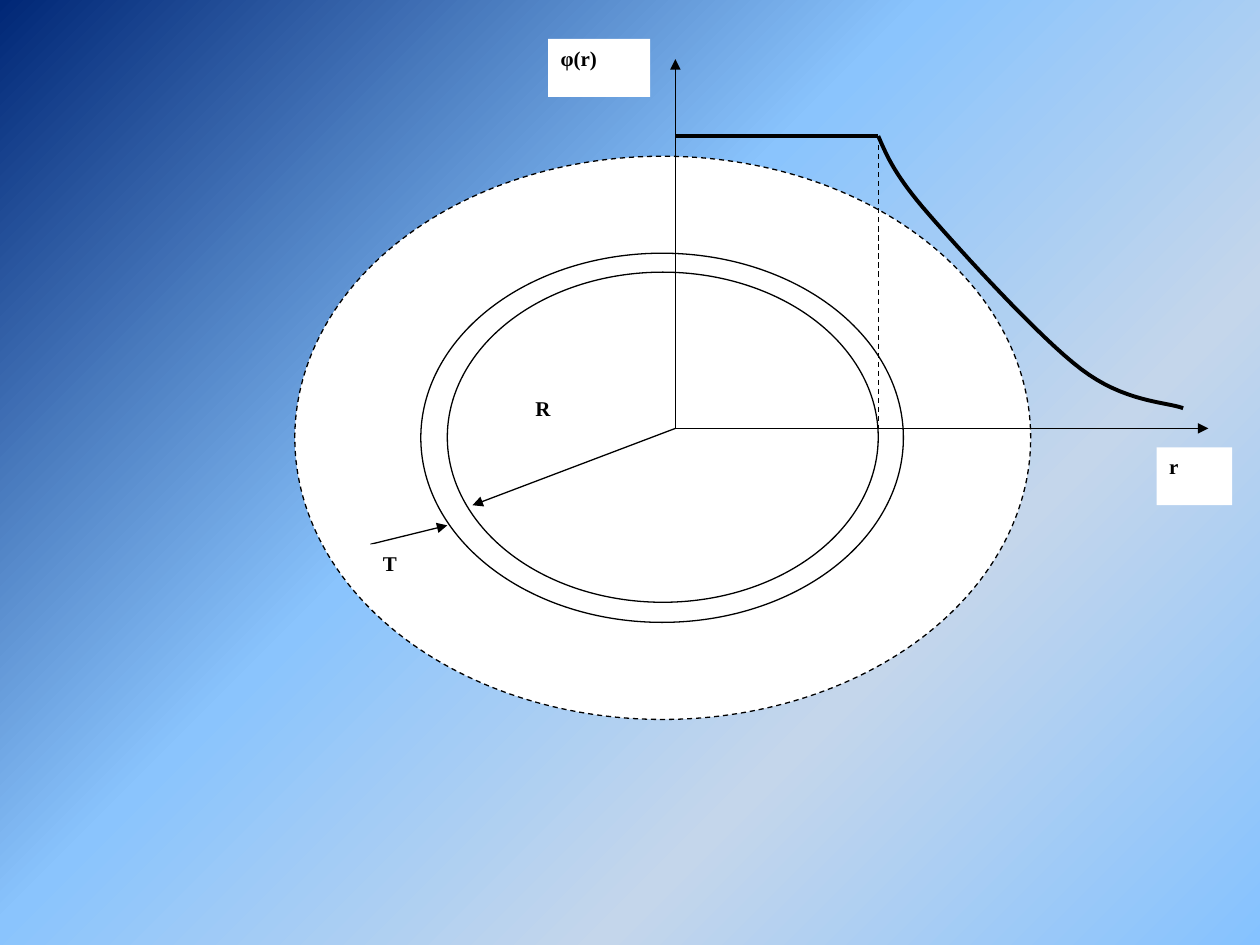
from dataclasses import dataclass
from typing import NamedTuple

from lxml import etree
from pptx import Presentation
from pptx.dml.color import RGBColor
from pptx.enum.dml import MSO_LINE
from pptx.enum.shapes import MSO_CONNECTOR, MSO_SHAPE
from pptx.enum.text import MSO_ANCHOR, PP_ALIGN
from pptx.oxml.ns import qn
from pptx.shapes.shapetree import GroupShapes
from pptx.slide import Slide
from pptx.util import Inches, Pt

DASH = MSO_LINE.DASH
STRAIGHT = MSO_CONNECTOR.STRAIGHT
OVAL = MSO_SHAPE.OVAL
TOP = MSO_ANCHOR.TOP
JUSTIFY = PP_ALIGN.JUSTIFY


@dataclass(frozen=True)
class Theme:
    ink: RGBColor = RGBColor(0, 0, 0)
    paper: RGBColor = RGBColor(255, 255, 255)
    font: str = "Times New Roman"
    label_size: Pt = Pt(12)
    thin: Pt = Pt(0.75)
    thick: Pt = Pt(2.25)
    # Stop position in percent and colour
    background: tuple = ((0, "002776"), (42, "8AC4FD"), (70, "C4D6EB"),
                         (100, "85C2FF"), (100, "FFEBFA"))


THEME = Theme()


class Point(NamedTuple):
    x: float
    y: float


class Ellipse(NamedTuple):
    left: float
    top: float
    width: float
    height: float
    dashed: bool = False


class Segment(NamedTuple):
    start: Point
    end: Point
    arrow: bool = False
    dashed: bool = False
    weight: Pt = THEME.thin


class Label(NamedTuple):
    text: str
    left: float
    top: float
    width: float = 0.6
    height: float = 0.46


ORIGIN = Point(5.36, 3.4)
EDGE = Point(6.97, 1.08)  # where the potential stops being constant

ELLIPSES = (
    Ellipse(2.34, 1.24, 5.84, 4.47, dashed=True),
    Ellipse(3.34, 2.01, 3.83, 2.93),
    Ellipse(3.55, 2.16, 3.42, 2.62),
)
SEGMENTS = (
    Segment(ORIGIN, Point(9.59, ORIGIN.y), arrow=True),
    Segment(ORIGIN, Point(ORIGIN.x, 0.47), arrow=True),
    Segment(ORIGIN, Point(3.75, 4.01), arrow=True),
    Segment(Point(2.94, 4.32), Point(3.55, 4.17), arrow=True),
    Segment(EDGE, Point(EDGE.x, ORIGIN.y), dashed=True),
    Segment(Point(ORIGIN.x, EDGE.y), EDGE, weight=THEME.thick),
)
# Each Bézier piece: two control points and an end point
DECAY = (
    (Point(7.04, 1.24), Point(7.1, 1.39), Point(7.37, 1.7)),
    (Point(7.64, 2.01), Point(8.25, 2.68), Point(8.58, 2.93)),
    (Point(8.92, 3.19), Point(9.25, 3.19), Point(9.39, 3.24)),
)
LABELS = (
    Label("r", 9.18, 3.55),
    Label("φ(r)", 4.35, 0.31, width=0.81),
    Label("R", 4.15, 3.09),
    Label("T", 2.94, 4.32),
)


def paint_background(slide: Slide) -> None:
    fill = slide.background.fill
    fill.gradient()
    fill.gradient_angle = 315
    stops = next(slide.element.iter(qn("a:gsLst")))
    for stop in list(stops):
        stops.remove(stop)
    for percent, colour in THEME.background:
        stop = etree.SubElement(stops, qn("a:gs"), pos=str(percent * 1000))
        etree.SubElement(stop, qn("a:srgbClr"), val=colour)


def style_line(line, weight: Pt, dashed: bool = False) -> None:
    line.color.rgb = THEME.ink
    line.width = weight
    if dashed:
        line.dash_style = DASH


def draw_ellipse(shapes: GroupShapes, ellipse: Ellipse) -> None:
    shape = shapes.add_shape(OVAL, *map(Inches, ellipse[:4]))
    shape.shadow.inherit = False
    shape.fill.solid()
    shape.fill.fore_color.rgb = THEME.paper
    style_line(shape.line, THEME.thin, ellipse.dashed)


def draw_segment(shapes: GroupShapes, segment: Segment) -> None:
    connector = shapes.add_connector(
        STRAIGHT, *map(Inches, (*segment.start, *segment.end)))
    style_line(connector.line, segment.weight, segment.dashed)
    properties = connector.element.spPr
    if segment.arrow:
        outline = properties.find(qn("a:ln"))
        etree.SubElement(outline, qn("a:tailEnd"), type="triangle")
    etree.SubElement(properties, qn("a:effectLst"))


def bezier_points(start: Point, pieces: tuple, steps: int = 16) -> list[Point]:
    """Sample consecutive cubic Bézier pieces, leaving out the start."""
    points = []
    for first, second, end in pieces:
        for step in range(1, steps + 1):
            t = step / steps
            u = 1 - t
            points.append(Point(*(
                u**3 * a + 3 * u**2 * t * b + 3 * u * t**2 * c + t**3 * d
                for a, b, c, d in zip(start, first, second, end))))
        start = end
    return points


def draw_decay(shapes: GroupShapes) -> None:
    builder = shapes.build_freeform(Inches(EDGE.x), Inches(EDGE.y))
    builder.add_line_segments(
        [(Inches(point.x), Inches(point.y))
         for point in bezier_points(EDGE, DECAY)],
        close=False)
    curve = builder.convert_to_shape()
    curve.shadow.inherit = False
    curve.fill.background()
    style_line(curve.line, THEME.thick)


def draw_label(shapes: GroupShapes, label: Label) -> None:
    box = shapes.add_textbox(*map(Inches, label[1:]))
    box.fill.solid()
    box.fill.fore_color.rgb = THEME.paper
    frame = box.text_frame
    frame.word_wrap = True
    frame.vertical_anchor = TOP
    paragraph = frame.paragraphs[0]
    paragraph.alignment = JUSTIFY
    run = paragraph.add_run()
    run.text = label.text
    run.font.name = THEME.font
    run.font.size = THEME.label_size
    run.font.bold = True
    run.font.color.rgb = THEME.ink


def main() -> None:
    presentation = Presentation()
    presentation.slide_width = Inches(10)
    presentation.slide_height = Inches(7.5)
    slide = presentation.slides.add_slide(presentation.slide_layouts[6])
    paint_background(slide)

    shapes = slide.shapes.add_group_shape().shapes
    for ellipse in ELLIPSES:
        draw_ellipse(shapes, ellipse)
    for segment in SEGMENTS:
        draw_segment(shapes, segment)
    draw_decay(shapes)
    for label in LABELS:
        draw_label(shapes, label)
    presentation.save("out.pptx")


if __name__ == "__main__":
    main()
